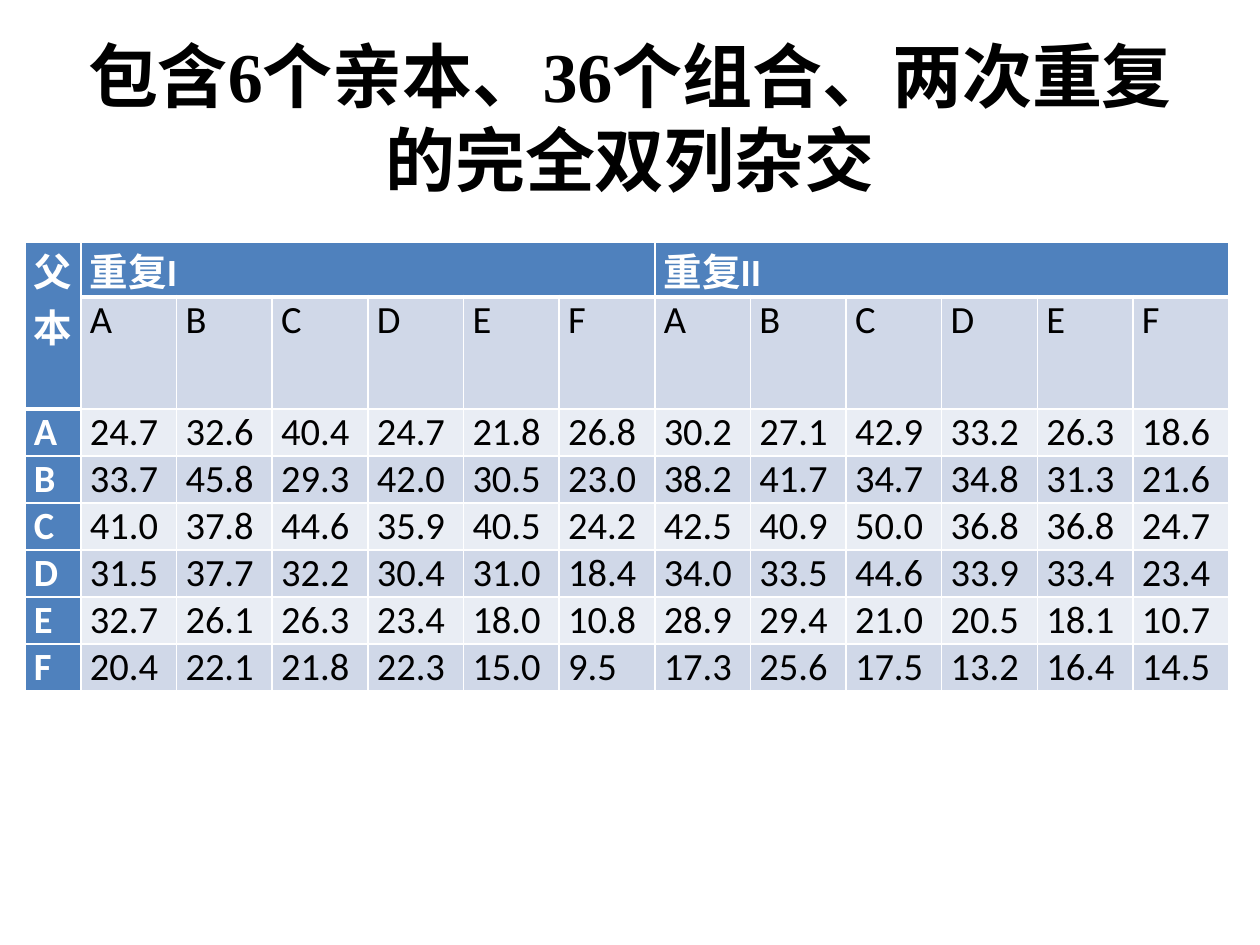
from lxml.etree import SubElement
from pptx import Presentation
from pptx.dml.color import RGBColor
from pptx.enum.text import MSO_ANCHOR as Anchor, PP_ALIGN as Align
from pptx.oxml.ns import qn
from pptx.util import Pt

PX = 914400 // 126
WHITE, BLACK, BLUE = "FFFFFF", "000000", "4F81BD"
BANDS = ["E9EDF4", "D0D8E8"]

TITLE = "包含6个亲本、36个组合、两次重复的完全双列杂交"
CORNER = "父本"
REPEATS = ["重复I", "重复II"]
PARENTS = ["A", "B", "C", "D", "E", "F"]
YIELDS = [
    ["24.7", "32.6", "40.4", "24.7", "21.8", "26.8", "30.2", "27.1", "42.9", "33.2", "26.3", "18.6"],
    ["33.7", "45.8", "29.3", "42.0", "30.5", "23.0", "38.2", "41.7", "34.7", "34.8", "31.3", "21.6"],
    ["41.0", "37.8", "44.6", "35.9", "40.5", "24.2", "42.5", "40.9", "50.0", "36.8", "36.8", "24.7"],
    ["31.5", "37.7", "32.2", "30.4", "31.0", "18.4", "34.0", "33.5", "44.6", "33.9", "33.4", "23.4"],
    ["32.7", "26.1", "26.3", "23.4", "18.0", "10.8", "28.9", "29.4", "21.0", "20.5", "18.1", "10.7"],
    ["20.4", "22.1", "21.8", "22.3", "15.0", "9.5", "17.3", "25.6", "17.5", "13.2", "16.4", "14.5"],
]

TABLE_LEFT, TABLE_TOP, TABLE_WIDTH = 25, 242, 1204
LABEL_WIDTH = 56
ROW_HEIGHTS = [55, 112] + [47] * len(PARENTS)


def px(value):
    return round(value * PX)


def color(value):
    return RGBColor.from_string(value)


def write(frame, text, size=22, font="Calibri", fill=BLACK, bold=False, align=Align.LEFT):
    para = frame.paragraphs[0]
    para.alignment = align
    span = para.add_run()
    span.text = text
    span.font.size = Pt(size)
    span.font.name = font
    span.font.bold = bold
    span.font.color.rgb = color(fill)


def style_cell(cell, fill, top, bottom):
    cell.margin_left = cell.margin_right = px(9)
    cell.margin_top = cell.margin_bottom = 0
    properties = cell._tc.get_or_add_tcPr()
    for side, width in (("L", 1), ("R", 1), ("T", top), ("B", bottom)):
        line = SubElement(properties, qn(f"a:ln{side}"), w=str(Pt(width)))
        SubElement(SubElement(line, qn("a:solidFill")), qn("a:srgbClr"), val=WHITE)
    cell.fill.solid()
    cell.fill.fore_color.rgb = color(fill)


def add_title(page):
    box = page.shapes.add_textbox(px(63), px(38), px(1134), px(157))
    box.text_frame.word_wrap = True
    box.text_frame.vertical_anchor = Anchor.MIDDLE
    write(box.text_frame, TITLE, size=40, font="Times New Roman", bold=True, align=Align.CENTER)


def add_yield_table(page):
    count = len(PARENTS)
    header = [CORNER] + [text for name in REPEATS for text in [name] + [""] * (count - 1)]
    rows = [header, [""] + PARENTS * len(REPEATS)]
    rows += [[parent] + values for parent, values in zip(PARENTS, YIELDS)]
    column_count = len(header)
    table = page.shapes.add_table(
        len(rows), column_count, px(TABLE_LEFT), px(TABLE_TOP), px(TABLE_WIDTH), px(sum(ROW_HEIGHTS))
    ).table
    value_width = (TABLE_WIDTH - LABEL_WIDTH) / (column_count - 1)
    for index, column in enumerate(table.columns):
        column.width = px(value_width if index else LABEL_WIDTH)
    for row, height in zip(table.rows, ROW_HEIGHTS):
        row.height = px(height)

    for r, texts in enumerate(rows):
        for c, text in enumerate(texts):
            cell = table.cell(r, c)
            heading = r == 0 or c == 0
            last_heading = 0 if c else 1
            style_cell(
                cell,
                BLUE if heading else BANDS[r % 2],
                top=3 if r == last_heading + 1 else 1,
                bottom=3 if r == last_heading else 1,
            )
            if r > 1 and c:
                cell.vertical_anchor = Anchor.BOTTOM
            if text:
                write(
                    cell.text_frame,
                    text,
                    fill=WHITE if heading else BLACK,
                    bold=heading,
                    align=Align.JUSTIFY if r == 0 and c else Align.LEFT,
                )

    table.cell(0, 0).merge(table.cell(1, 0))
    for start in range(1, column_count, count):
        table.cell(0, start).merge(table.cell(0, start + count - 1))


def main():
    deck = Presentation()
    deck.slide_width, deck.slide_height = px(1260), px(945)
    page = deck.slides.add_slide(deck.slide_layouts[6])
    add_title(page)
    add_yield_table(page)
    deck.save("out.pptx")


if __name__ == "__main__":
    main()
